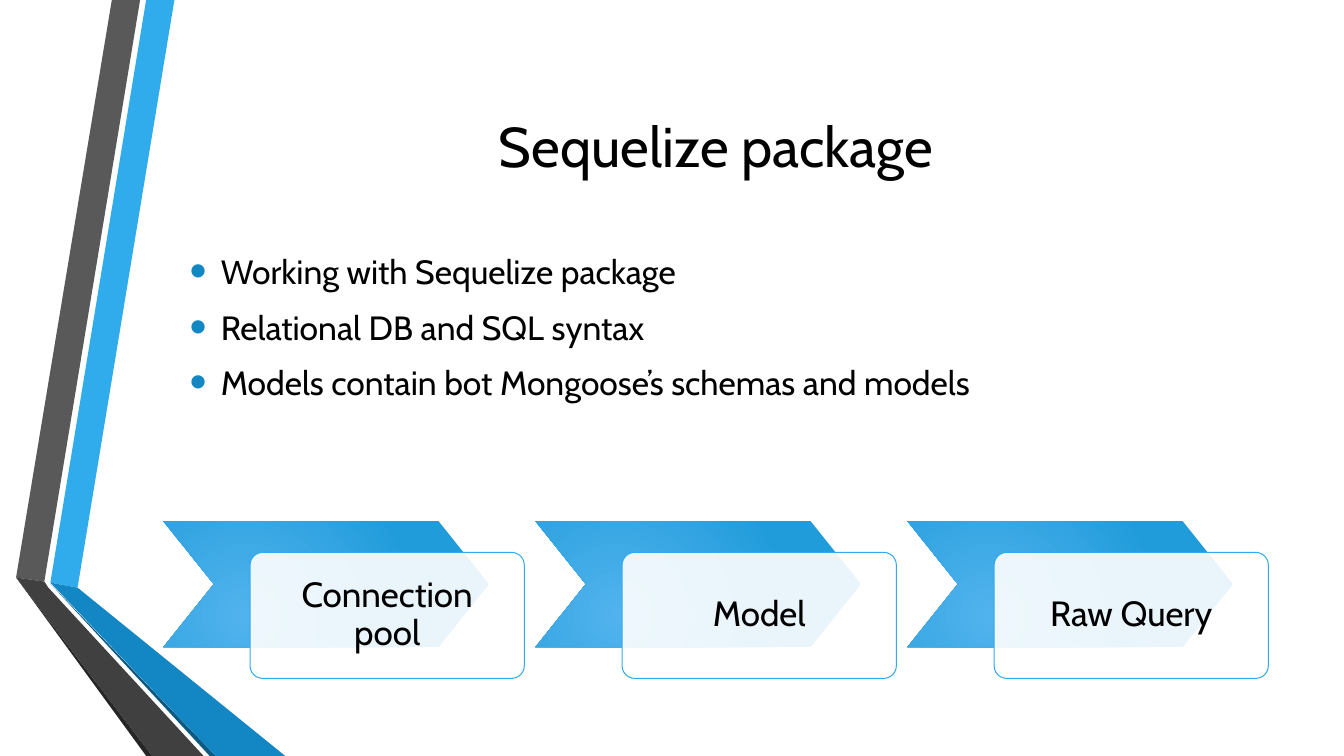
import pptx
import pptx.util
import pptx.dml.color
import pptx.enum.shapes
import pptx.enum.text
import pptx.oxml
import pptx.oxml.ns

Inches, Pt = pptx.util.Inches, pptx.util.Pt
ALIGN = pptx.enum.text.PP_ALIGN
SHAPE = pptx.enum.shapes.MSO_SHAPE
NS = pptx.oxml.ns.nsdecls("a")

COLORS = {
    "text": "000000", "white": "FFFFFF", "sky": "30ACEC", "blue": "1287C3",
    "navy": "0C5A82", "gray": "595959", "charcoal": "404040", "black": "262626",
    "glow": "51B3ED", "edge": "219CDB",
}


def rgb(name):
    return pptx.dml.color.RGBColor.from_string(COLORS[name])


def apply(target, values):
    for name, value in values.items():
        setattr(target, name, value)


class SlideBuilder:
    font = "Cabin"
    frame = {
        "word_wrap": True,
        "auto_size": pptx.enum.text.MSO_AUTO_SIZE.NONE,
        "vertical_anchor": pptx.enum.text.MSO_ANCHOR.MIDDLE,
    }

    def __init__(self, slide):
        self.slide = slide

    def set_text(self, shape, lines, size, paragraph_format, frame_format=None):
        text_frame = shape.text_frame
        apply(text_frame, {**self.frame, **(frame_format or {})})
        text_frame.text = "\n".join(lines)
        for paragraph in text_frame.paragraphs:
            apply(paragraph, paragraph_format)
            for run in paragraph.runs:
                apply(run.font, {"name": self.font, "size": Pt(size)})
                run.font.color.rgb = rgb("text")
        return text_frame.paragraphs

    def place(self, shape, left, top, width, height):
        apply(shape, {"left": Inches(left), "top": Inches(top),
                      "width": Inches(width), "height": Inches(height)})

    def title(self, text, box):
        heading = self.slide.shapes.title
        self.place(heading, *box)
        self.set_text(heading, [text], 40, {"alignment": ALIGN.CENTER})

    def bullets(self, lines, box):
        body = self.slide.placeholders[1]
        self.place(body, *box)
        form = {"alignment": ALIGN.LEFT, "space_after": Pt(6)}
        for paragraph in self.set_text(body, lines, 24, form):
            properties = paragraph._p.get_or_add_pPr()
            properties.set("marL", str(Inches(0.31)))
            properties.set("indent", str(Inches(-0.31)))
            for xml in (
                f'<a:buClr {NS}><a:srgbClr val="{COLORS["blue"]}"/></a:buClr>',
                f'<a:buSzPct {NS} val="145000"/>',
                f'<a:buFont {NS} typeface="Arial"/>',
                f'<a:buChar {NS} char="•"/>',
            ):
                properties.append(pptx.oxml.parse_xml(xml))

    def band(self, color, points):
        corners = [(Inches(x), Inches(y)) for x, y in points]
        outline = self.slide.shapes.build_freeform(*corners[0], scale=1.0)
        outline.add_line_segments(corners[1:], close=True)
        ribbon = outline.convert_to_shape()
        ribbon.shadow.inherit = False
        ribbon.fill.solid()
        ribbon.fill.fore_color.rgb = rgb(color)
        ribbon.line.fill.background()

    def preset(self, kind, adjustment, box):
        shape = self.slide.shapes.add_shape(kind, *map(Inches, box))
        shape.adjustments[0] = adjustment
        shape.shadow.inherit = False
        return shape

    def chevron(self, box):
        arrow = self.preset(SHAPE.CHEVRON, 0.4, box)
        arrow.line.fill.background()
        # Radial gradient
        gradient = pptx.oxml.parse_xml(
            f'<a:gradFill {NS} rotWithShape="1"><a:gsLst>'
            f'<a:gs pos="0"><a:srgbClr val="{COLORS["glow"]}"/></a:gs>'
            f'<a:gs pos="100000"><a:srgbClr val="{COLORS["edge"]}"/></a:gs>'
            '</a:gsLst><a:path path="circle"><a:fillToRect l="50000" '
            't="100000" r="100000" b="50000"/></a:path></a:gradFill>')
        arrow._element.spPr.find(pptx.oxml.ns.qn("a:prstGeom")).addnext(gradient)

    def card(self, text, box):
        label = self.preset(SHAPE.ROUNDED_RECTANGLE, 0.1, box)
        label.fill.solid()
        label.fill.fore_color.rgb = rgb("white")
        label.line.color.rgb = rgb("sky")
        label.line.width = Pt(0.75)
        # Slight transparency lets the chevron show through
        white = label._element.spPr.find(
            pptx.oxml.ns.qn("a:solidFill")).find(pptx.oxml.ns.qn("a:srgbClr"))
        white.append(pptx.oxml.parse_xml(f'<a:alpha {NS} val="90000"/>'))
        margins = dict.fromkeys(
            ("margin_left", "margin_right", "margin_top", "margin_bottom"),
            Inches(0.22))
        self.set_text(label, [text], 25,
                      {"alignment": ALIGN.CENTER, "line_spacing": 0.9}, margins)


BANDS = [
    ("sky", [(0.5, 5.78), (0.77, 5.83), (1.73, 0), (1.45, 0)]),
    ("gray", [(1.39, 0), (1.11, 0), (0.16, 5.73), (0.44, 5.77)]),
    ("black", [(0.16, 5.73), (1.45, 7.5), (1.51, 7.5)]),
    ("navy", [(0.5, 5.79), (2.08, 7.5), (2.14, 7.5)]),
    ("blue", [(0.5, 5.78), (2.14, 7.5), (2.83, 7.5), (0.77, 5.83)]),
    ("charcoal", [(2.02, 7.5), (0.48, 5.83), (0.44, 5.77), (0.16, 5.73),
                  (1.51, 7.5)]),
]
TOPICS = [
    "Working with Sequelize package",
    "Relational DB and SQL syntax",
    "Models contain bot Mongoose’s schemas and models",
]
STEPS = ["Connection pool", "Model", "Raw Query"]
STEP_LEFT, STEP_PITCH = 1.62, 3.69


def main():
    deck = pptx.Presentation()
    apply(deck, {"slide_width": Inches(13.33), "slide_height": Inches(7.5)})
    builder = SlideBuilder(deck.slides.add_slide(deck.slide_layouts[1]))

    # Folded ribbons on the left
    for color, points in BANDS:
        builder.band(color, points)

    # Title and list
    builder.title("Sequelize package", (1.62, 0.48, 10.96, 1.92))
    builder.bullets(TOPICS, (1.78, 1.53, 10.96, 3.42))

    # Chevron process
    for index, step in enumerate(STEPS):
        left = STEP_LEFT + index * STEP_PITCH
        builder.chevron((left, 5.17, 3.23, 1.25))
        builder.card(step, (left + 0.86, 5.48, 2.72, 1.25))

    deck.save("out.pptx")


if __name__ == "__main__":
    main()
